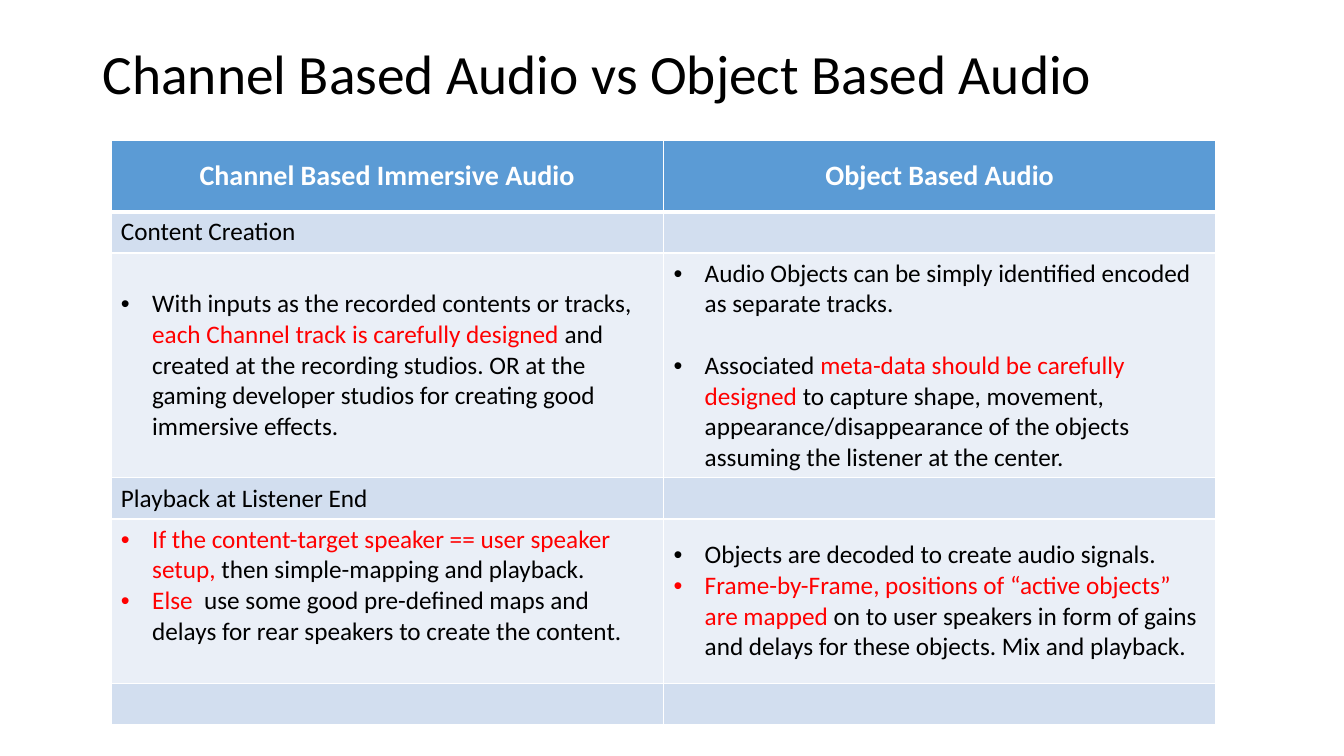
"""Build a slide comparing channel based and object based audio."""
from dataclasses import dataclass

import pptx
import pptx.dml.color
import pptx.enum.text
import pptx.oxml
import pptx.oxml.ns
import pptx.table
import pptx.text.text
import pptx.util

Inches = pptx.util.Inches
Pt = pptx.util.Pt
RGBColor = pptx.dml.color.RGBColor
ALIGN = pptx.enum.text.PP_ALIGN
ANCHOR = pptx.enum.text.MSO_ANCHOR

FONT = "Calibri"
BLACK = RGBColor(0x00, 0x00, 0x00)
WHITE = RGBColor(0xFF, 0xFF, 0xFF)
RED = RGBColor(0xFF, 0x00, 0x00)
BLUE = RGBColor(0x5B, 0x9B, 0xD5)
MID = RGBColor(0xD2, 0xDE, 0xEF)
PALE = RGBColor(0xEA, 0xEF, 0xF7)


@dataclass(frozen=True)
class Run:
    text: str
    color: RGBColor = BLACK
    size: float = 18
    bold: bool = False


@dataclass(frozen=True)
class Para:
    runs: tuple[Run, ...]
    bullet: bool = False
    center: bool = False
    before: float = 0


@dataclass(frozen=True)
class Cell:
    paras: tuple[Para, ...] = ()
    anchor: ANCHOR = ANCHOR.MIDDLE


@dataclass(frozen=True)
class Row:
    height: float
    fill: RGBColor
    cells: tuple[Cell, Cell]
    rule: float = 1


def head(text: str) -> Cell:
    return Cell((Para((Run(text, WHITE, 20, True),), center=True),))


def label(text: str) -> Cell:
    return Cell((Para((Run(text),)),))


def point(*runs: Run, before: float = 0) -> Para:
    return Para(runs, bullet=True, before=before)


ROWS = (
    Row(0.71, BLUE, (head("Channel Based Immersive Audio"), head("Object Based Audio")), 3),
    Row(0.41, MID, (label("Content Creation"), Cell())),
    Row(2.23, PALE, (
        Cell((point(
            Run("With inputs as the recorded contents or tracks, "),
            Run("each Channel track is carefully designed ", RED),
            Run("and created at the recording studios. OR at the gaming developer "
                "studios for creating good immersive effects.")),)),
        Cell((
            point(Run("Audio Objects can be simply identified encoded as separate tracks.")),
            point(Run("Associated "),
                  Run("meta-data should be carefully designed ", RED),
                  Run("to capture shape, movement, appearance/disappearance of the "
                      "objects assuming the listener at the center."),
                  before=22))))),
    Row(0.41, MID, (label("Playback at Listener End"), Cell())),
    Row(1.63, PALE, (
        Cell((
            point(Run("If the content-target speaker == user speaker setup,", RED),
                  Run(" then simple-mapping and playback.")),
            point(Run("Else ", RED),
                  Run(" use some good pre-defined maps and delays for rear speakers "
                      "to create the content."))), ANCHOR.TOP),
        Cell((
            point(Run("Objects are decoded to create audio signals.")),
            point(Run("Frame-by-Frame, positions of “active objects” are mapped", RED),
                  Run(" on to user speakers in form of gains and delays for these "
                      "objects. Mix and playback.")))))),
    Row(0.41, MID, (Cell(), Cell())),
)


def add_xml(parent, tag: str, **attrs: str):
    return pptx.oxml.ns.qn(tag) and parent.makeelement(pptx.oxml.ns.qn(tag), attrs)


def add_child(parent, tag: str, **attrs: str):
    child = parent.makeelement(pptx.oxml.ns.qn(tag), attrs)
    parent.append(child)
    return child


def write(frame: pptx.text.text.TextFrame, paras: tuple[Para, ...]) -> None:
    for i, para in enumerate(paras):
        line = frame.add_paragraph() if i else frame.paragraphs[0]
        line.alignment = ALIGN.CENTER if para.center else ALIGN.LEFT
        if para.before:
            line.space_before = Pt(para.before)
        if para.bullet:
            props = line._p.get_or_add_pPr()
            props.set("marL", str(Inches(0.31)))
            props.set("indent", str(-Inches(0.31)))
            add_child(props, "a:buFont", typeface="Arial")
            add_child(props, "a:buChar", char="•")
        for part in para.runs:
            run = line.add_run()
            run.text = part.text
            run.font.name = FONT
            run.font.size = Pt(part.size)
            run.font.bold = part.bold
            run.font.color.rgb = part.color


def edge(cell: pptx.table._Cell, top: float, base: float) -> None:
    props = cell._tc.get_or_add_tcPr()
    for side, width in (("L", 1), ("R", 1), ("T", top), ("B", base)):
        line = add_child(props, f"a:ln{side}", w=str(Pt(width)))
        add_child(add_child(line, "a:solidFill"), "a:srgbClr", val=str(WHITE))


def add_title(slide) -> None:
    box = slide.shapes.add_textbox(Inches(0.92), Inches(0.4), Inches(11.38), Inches(0.72))
    frame = box.text_frame
    frame.word_wrap = True
    frame.vertical_anchor = ANCHOR.MIDDLE
    write(frame, (Para((Run("Channel Based Audio vs Object Based Audio", size=39.6),)),))
    frame.paragraphs[0].line_spacing = 0.9


def add_grid(slide) -> None:
    height = sum(row.height for row in ROWS)
    grid = slide.shapes.add_table(
        len(ROWS), 2, Inches(1.1), Inches(1.39), Inches(10.96), Inches(height)).table
    top = 1
    for r, row in enumerate(ROWS):
        grid.rows[r].height = Inches(row.height)
        for c, item in enumerate(row.cells):
            cell = grid.cell(r, c)
            edge(cell, top, row.rule)
            cell.fill.solid()
            cell.fill.fore_color.rgb = row.fill
            cell.vertical_anchor = item.anchor
            write(cell.text_frame, item.paras)
        top = row.rule


def main() -> None:
    deck = pptx.Presentation()
    deck.slide_width = Inches(13.33)
    deck.slide_height = Inches(7.5)
    slide = deck.slides.add_slide(deck.slide_layouts[6])
    add_title(slide)
    add_grid(slide)
    deck.save("out.pptx")


if __name__ == "__main__":
    main()
